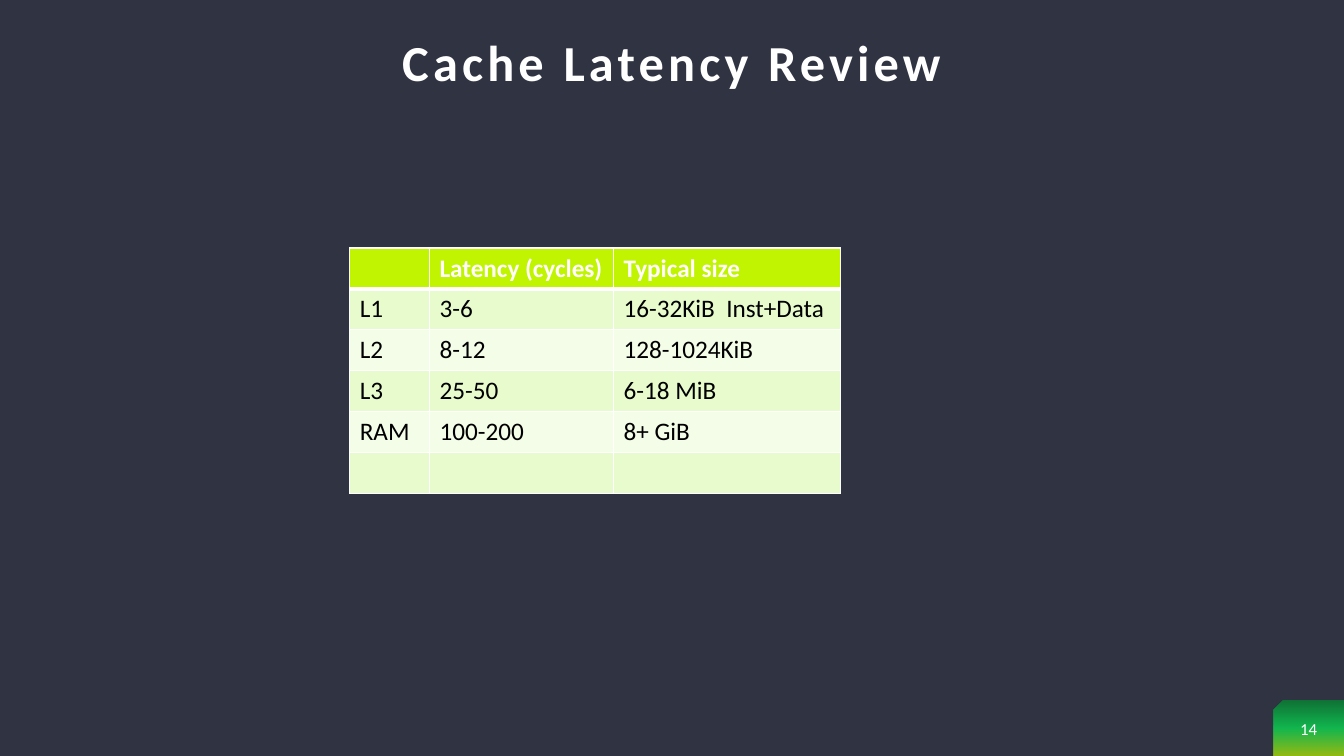
from pptx import Presentation
from pptx.dml.color import RGBColor
from pptx.enum.shapes import MSO_SHAPE
from pptx.enum.text import MSO_ANCHOR, PP_ALIGN
from pptx.oxml.xmlchemy import OxmlElement
from pptx.util import Pt

COLORS = {
    "background": "2F3342",
    "white": "FFFFFF",
    "black": "000000",
    "header": "C0F400",
    "odd": "E8FBCC",
    "even": "F4FDE7",
}
TAB_GRADIENT = [(0, "038B30"), (50, "05EE55"), (100, "C0F400")]
COLUMN_WIDTHS = [57, 131.5, 162]
ROW_HEIGHT = 29.2
LATENCIES = [
    ["", "Latency (cycles)", "Typical size"],
    ["L1", "3-6", "16-32KiB  Inst+Data"],
    ["L2", "8-12", "128-1024KiB"],
    ["L3", "25-50", "6-18 MiB"],
    ["RAM", "100-200", "8+ GiB"],
    ["", "", ""],
]


def add_element(parent, tag, **attributes):
    """Append a drawing element with attributes and return it."""
    element = OxmlElement(tag)
    for name, value in attributes.items():
        element.set(name, str(value))
    parent.append(element)
    return element


def format_paragraph(para, size, color, bold=False, align=None):
    """Set the font and alignment of a paragraph."""
    para.font.name = "Calibri"
    para.font.size = Pt(size)
    para.font.bold = bold
    para.font.color.rgb = RGBColor.from_string(COLORS[color])
    para.alignment = align


def place(shape, left, top, width, height):
    """Move and size a shape, in points."""
    shape.left, shape.top = Pt(left), Pt(top)
    shape.width, shape.height = Pt(width), Pt(height)


def set_title(page, text):
    """Fill and format the title placeholder."""
    title = page.shapes.title
    place(title, 46.8, 0, 866.2, 93.6)
    frame = title.text_frame
    frame.text = text
    frame.vertical_anchor = MSO_ANCHOR.MIDDLE
    para = frame.paragraphs[0]
    format_paragraph(para, 36, "white", bold=True, align=PP_ALIGN.CENTER)
    para.line_spacing = 0.9
    para.runs[0].font._element.set("spc", "300")


def add_number_tab(page, number):
    """Draw the corner tab with its gradient and the page number."""
    tab = page.shapes.add_shape(
        MSO_SHAPE.SNIP_1_RECTANGLE, Pt(909.4), Pt(500.4), Pt(50.6), Pt(39.6)
    )
    tab.shadow.inherit = False
    tab.line.fill.background()
    tab._element.spPr.xfrm.set("flipH", "1")
    tab.fill.gradient()
    tab.fill.gradient_angle = 270
    stops = tab.fill.gradient_stops._gsLst
    for stop in list(stops):
        stops.remove(stop)
    for position, color in TAB_GRADIENT:
        stop = add_element(stops, "a:gs", pos=position * 1000)
        add_element(add_element(stop, "a:srgbClr", val=color), "a:alpha", val=70000)

    box = page.shapes.add_textbox(Pt(909.4), Pt(504.7), Pt(50.6), Pt(32.4))
    frame = box.text_frame
    frame.word_wrap = True
    frame.vertical_anchor = MSO_ANCHOR.MIDDLE
    frame.text = number
    format_paragraph(frame.paragraphs[0], 12, "white", align=PP_ALIGN.CENTER)


def set_borders(cell, top, bottom):
    """Give a cell white borders, with top and bottom widths in points."""
    properties = cell._tc.get_or_add_tcPr()
    for side, width in (("L", 1), ("R", 1), ("T", top), ("B", bottom)):
        line = add_element(properties, f"a:ln{side}", w=Pt(width))
        add_element(add_element(line, "a:solidFill"), "a:srgbClr", val=COLORS["white"])


def add_latency_table(page):
    """Add the table of cache levels, latencies and sizes."""
    frame = page.shapes.add_table(
        len(LATENCIES), len(COLUMN_WIDTHS), Pt(249.8), Pt(177.1),
        Pt(sum(COLUMN_WIDTHS)), Pt(ROW_HEIGHT * len(LATENCIES)),
    )
    table = frame.table
    for column, width in zip(table.columns, COLUMN_WIDTHS):
        column.width = Pt(width)
    for index, texts in enumerate(LATENCIES):
        table.rows[index].height = Pt(ROW_HEIGHT)
        is_header = index == 0
        fill = "header" if is_header else ("even", "odd")[index % 2]
        for cell, text in zip(table.rows[index].cells, texts):
            cell.text = text
            set_borders(cell, 3 if index == 1 else 1, 3 if is_header else 1)
            cell.fill.solid()
            cell.fill.fore_color.rgb = RGBColor.from_string(COLORS[fill])
            color = "white" if is_header else "black"
            format_paragraph(cell.text_frame.paragraphs[0], 18, color, is_header)


def main():
    """Build the slide and save the deck."""
    deck = Presentation()
    deck.slide_width, deck.slide_height = Pt(960), Pt(540)
    page = deck.slides.add_slide(deck.slide_layouts[5])
    page.background.fill.solid()
    page.background.fill.fore_color.rgb = RGBColor.from_string(COLORS["background"])
    set_title(page, "Cache Latency Review")
    add_latency_table(page)
    add_number_tab(page, "14")
    deck.save("out.pptx")


if __name__ == "__main__":
    main()
